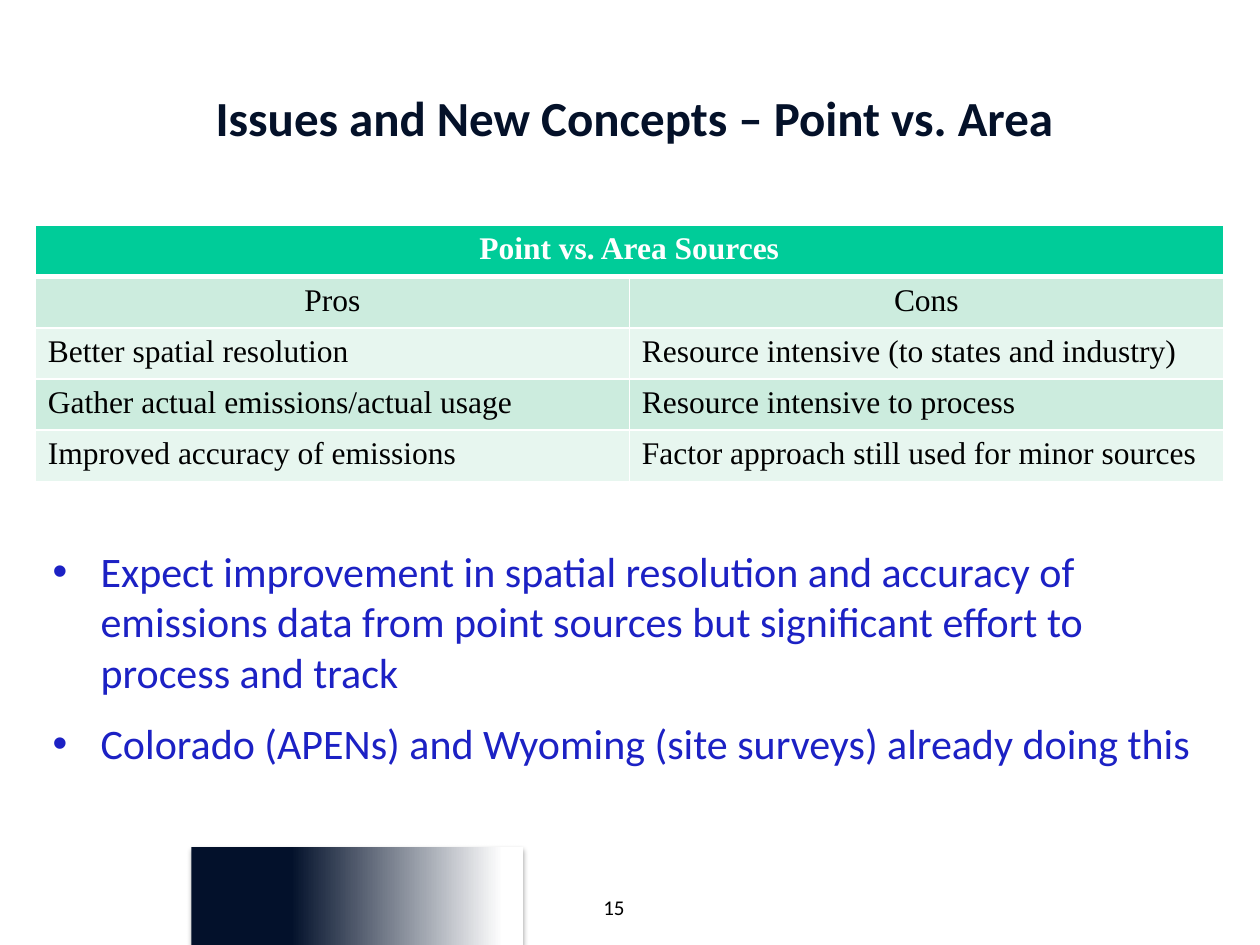
from dataclasses import dataclass

from lxml import etree
from pptx import Presentation
from pptx.dml.color import RGBColor
from pptx.enum.shapes import MSO_SHAPE
from pptx.enum.text import MSO_ANCHOR, PP_ALIGN
from pptx.oxml import parse_xml
from pptx.oxml.ns import nsdecls, qn
from pptx.util import Inches, Pt

RECTANGLE = MSO_SHAPE.RECTANGLE
MIDDLE = MSO_ANCHOR.MIDDLE
LEFT, CENTER = PP_ALIGN.LEFT, PP_ALIGN.CENTER
TITLE_ONLY = 5


@dataclass(frozen=True)
class Theme:
    """Colours, fonts and type sizes of the slide."""

    sans: str = "Calibri"
    serif: str = "Times New Roman"
    title: str = "041129"
    body: str = "1C21C4"
    navy: str = "03112B"
    white: str = "FFFFFF"
    black: str = "000000"
    header: str = "00CC99"
    bands: tuple = ("CCECDE", "E7F6EF")
    title_size: int = 28
    body_size: int = 24
    table_size: int = 18
    number_size: int = 12


class SlideBuilder:
    """Draws each kind of element on the current slide in one theme."""

    def __init__(self, slide, theme):
        self.slide = slide
        self.theme = theme

    def style(self, paragraph, size, color, name, bold=False, alignment=LEFT):
        """Format a whole paragraph."""
        paragraph.alignment = alignment
        font = paragraph.font
        font.size, font.name, font.bold = Pt(size), name, bold
        font.color.rgb = RGBColor.from_string(color)

    def gradient_block(self, left, top, width, height):
        """Add a navy-to-white rectangle with a soft shadow."""
        shape = self.slide.shapes.add_shape(RECTANGLE, left, top, width, height)
        shape.line.fill.background()
        shape.fill.gradient()
        shape.fill.gradient_angle = 0
        stops = ((0.3, self.theme.navy), (0.94, self.theme.white))
        for stop, (position, color) in zip(shape.fill.gradient_stops, stops):
            stop.position = position
            stop.color.rgb = RGBColor.from_string(color)
        shape.shadow.inherit = False
        effects = shape._element.spPr.find(qn("a:effectLst"))
        effects.append(parse_xml(
            f'<a:outerShdw {nsdecls("a")} blurRad="{Pt(3.1)}" dist="{Pt(1.8)}" '
            f'dir="5400000" rotWithShape="0"><a:srgbClr val="{self.theme.black}">'
            '<a:alpha val="35000"/></a:srgbClr></a:outerShdw>'))

    def title(self, text, left, top, width, height):
        """Place and format the title placeholder."""
        shape = self.slide.shapes.title
        shape.left, shape.top, shape.width, shape.height = left, top, width, height
        shape.fill.solid()
        shape.fill.fore_color.rgb = RGBColor.from_string(self.theme.white)
        shape.text_frame.text = text
        shape.text_frame.vertical_anchor = MIDDLE
        self.style(shape.text_frame.paragraphs[0], self.theme.title_size,
                   self.theme.title, self.theme.sans, True, CENTER)

    def text_box(self, lines, left, top, width, height, size, color, bulleted=False):
        """Add a text box with one paragraph per line."""
        frame = self.slide.shapes.add_textbox(left, top, width, height).text_frame
        frame.word_wrap = True
        frame.text = "\n".join(lines)
        for paragraph in frame.paragraphs:
            if bulleted:
                properties = paragraph._p.get_or_add_pPr()
                properties.set("marL", str(Inches(0.38)))
                properties.set("indent", str(-Inches(0.38)))
                etree.SubElement(properties, qn("a:buFont"), typeface="Arial")
                etree.SubElement(properties, qn("a:buChar"), char="•")
                paragraph.space_after = Pt(12)
            self.style(paragraph, size, color, self.theme.sans)

    def cell_borders(self, cell, top, bottom):
        """Give a cell white borders of the given top and bottom widths."""
        properties = cell._tc.get_or_add_tcPr()
        for side, width in (("L", 1), ("R", 1), ("T", top), ("B", bottom)):
            properties.append(parse_xml(
                f'<a:ln{side} {nsdecls("a")} w="{Pt(width)}"><a:solidFill>'
                f'<a:srgbClr val="{self.theme.white}"/></a:solidFill></a:ln{side}>'))

    def table(self, heading, rows, left, top, width, height):
        """Add a banded table under one merged heading."""
        theme = self.theme
        content = [(heading, "")] + rows
        table = self.slide.shapes.add_table(
            len(content), 2, left, top, width, height).table
        table.cell(0, 0).merge(table.cell(0, 1))
        for row, texts in enumerate(content):
            is_header = row == 0
            fill = theme.header if is_header else theme.bands[(row - 1) % 2]
            color = theme.white if is_header else theme.black
            for column, text in enumerate(texts):
                cell = table.cell(row, column)
                self.cell_borders(cell, 3 if row == 1 else 1, 3 if is_header else 1)
                cell.fill.solid()
                cell.fill.fore_color.rgb = RGBColor.from_string(fill)
                cell.text = text
                self.style(cell.text_frame.paragraphs[0], theme.table_size, color,
                           theme.serif, is_header, CENTER if row < 2 else LEFT)


def main():
    """Build and save the slide."""
    presentation = Presentation()
    presentation.slide_width, presentation.slide_height = Inches(10), Inches(7.5)
    theme = Theme()
    slide = presentation.slides.add_slide(presentation.slide_layouts[TITLE_ONLY])
    builder = SlideBuilder(slide, theme)

    builder.gradient_block(Inches(1.52), Inches(6.72), Inches(2.63), Inches(0.78))
    builder.title("Issues and New Concepts – Point vs. Area",
                  Inches(0.49), Inches(0.64), Inches(9.09), Inches(0.57))
    builder.text_box(
        ["Expect improvement in spatial resolution and accuracy of emissions data "
         "from point sources but significant effort to process and track",
         "Colorado (APENs) and Wyoming (site surveys) already doing this"],
        Inches(0.32), Inches(4.28), Inches(9.35), Inches(1.88),
        theme.body_size, theme.body, bulleted=True)
    builder.text_box(["15"], Inches(4.69), Inches(7.05), Inches(0.42), Inches(0.3),
                     theme.number_size, theme.black)
    builder.table(
        "Point vs. Area Sources",
        [("Pros", "Cons"),
         ("Better spatial resolution", "Resource intensive (to states and industry)"),
         ("Gather actual emissions/actual usage", "Resource intensive to process"),
         ("Improved accuracy of emissions",
          "Factor approach still used for minor sources")],
        Inches(0.28), Inches(1.79), Inches(9.43), Inches(2.03))
    presentation.save("out.pptx")


if __name__ == "__main__":
    main()
